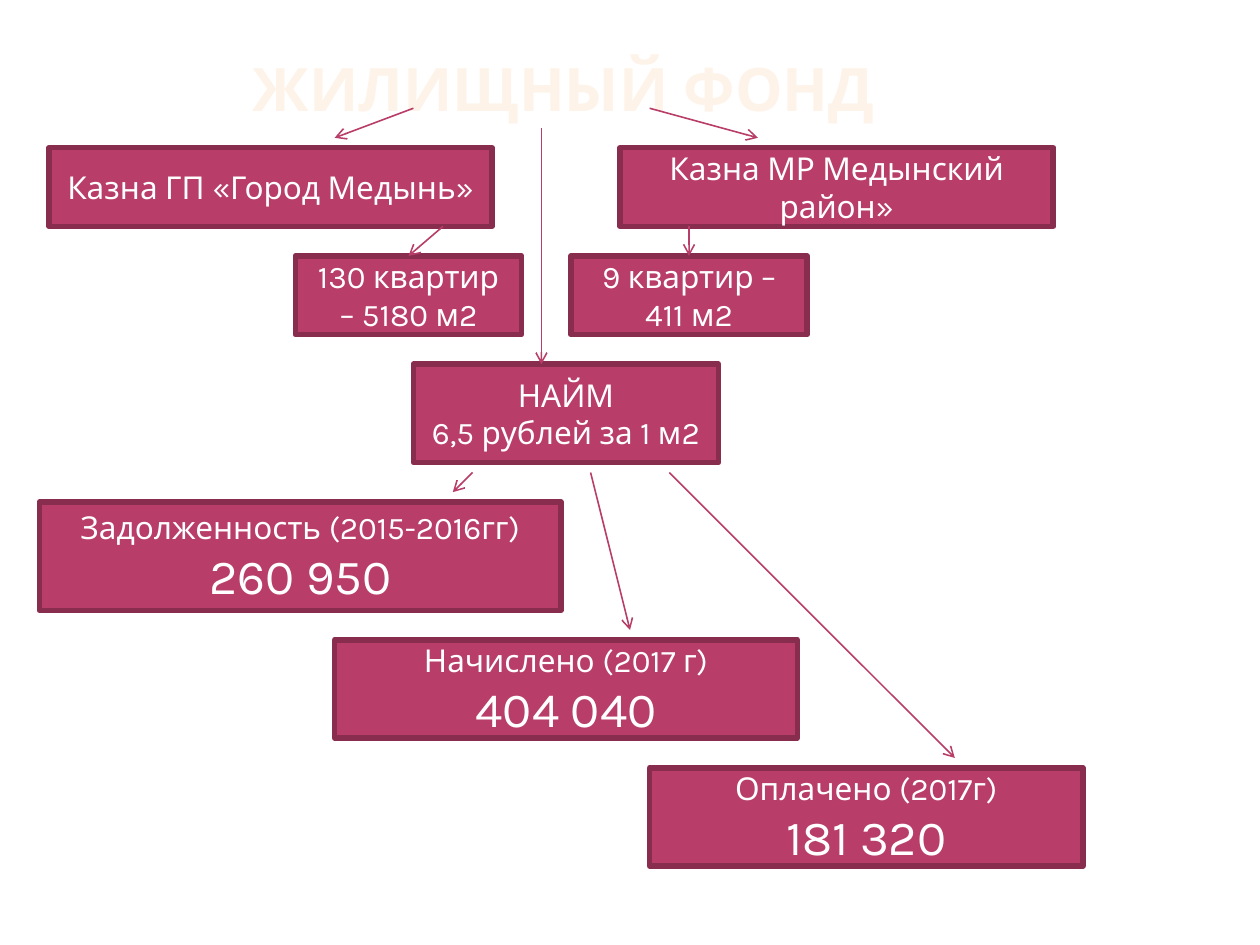
from dataclasses import dataclass

from pptx import Presentation
from pptx.dml.color import RGBColor
from pptx.enum.shapes import MSO_CONNECTOR, MSO_SHAPE
from pptx.enum.text import MSO_ANCHOR, MSO_AUTO_SIZE, PP_ALIGN
from pptx.oxml.ns import qn
from pptx.util import Inches, Pt
from lxml.etree import SubElement

COLUMNS, ROWS = 256, 192
UNIT = Inches(10) / COLUMNS  # square grid cell


@dataclass(frozen=True)
class Theme:
    font: str = "Karla"
    title_color: str = "FEF3E8"
    fill: str = "B83D68"
    border: str = "882D4D"
    text: str = "FFFFFF"
    title_size: float = 34.2
    label_size: float = 18
    amount_size: float = 28
    border_width: float = 3.15
    arrow_width: float = 0.9


@dataclass(frozen=True)
class Box:
    """A rectangle in grid columns and rows."""
    left: float
    top: float
    width: float
    height: float

    def inner(self, left, top, width, height):
        return Box(self.left + left, self.top + top, width, height)

    def point(self, column, row):
        return self.left + column, self.top + row

    def lengths(self):
        return [grid(value) for value in (self.left, self.top, self.width, self.height)]


THEME = Theme()


def grid(value):
    return round(value * UNIT)


def write_line(para, text, *, size, color, bold=False):
    para.alignment = PP_ALIGN.CENTER
    span = para.add_run()
    span.text = text
    span.font.name = THEME.font
    span.font.size = Pt(size)
    span.font.bold = bold
    span.font.color.rgb = RGBColor.from_string(color)


def add_card(page, box, label, amount=None):
    """Bordered rectangle with label lines and an optional large amount."""
    card = page.shapes.add_shape(MSO_SHAPE.RECTANGLE, *box.lengths())
    card.shadow.inherit = False
    card.fill.solid()
    card.fill.fore_color.rgb = RGBColor.from_string(THEME.fill)
    card.line.color.rgb = RGBColor.from_string(THEME.border)
    card.line.width = Pt(THEME.border_width)
    frame = card.text_frame
    frame.word_wrap = True
    frame.vertical_anchor = MSO_ANCHOR.MIDDLE
    lines = [(text, THEME.label_size) for text in label.split("\n")]
    if amount:
        lines.append((amount, THEME.amount_size))
    for index, (text, size) in enumerate(lines):
        para = frame.add_paragraph() if index else frame.paragraphs[0]
        write_line(para, text, size=size, color=THEME.text)
    return card


def add_arrow(page, start, end, target=None):
    """Arrow between grid points; a target card is joined at its top."""
    ends = [grid(value) for value in (*start, *end)]
    arrow = page.shapes.add_connector(MSO_CONNECTOR.STRAIGHT, *ends)
    arrow.line.color.rgb = RGBColor.from_string(THEME.fill)
    arrow.line.width = Pt(THEME.arrow_width)
    properties = arrow._element.spPr
    SubElement(properties.find(qn("a:ln")), qn("a:tailEnd"), type="arrow")
    SubElement(properties, qn("a:effectLst"))
    if target is not None:
        arrow.end_connect(target, 0)


def place_title(page, box):
    title = page.shapes.title
    title.left, title.top, title.width, title.height = box.lengths()
    frame = title.text_frame
    frame.auto_size = MSO_AUTO_SIZE.NONE
    frame.word_wrap = True
    frame.vertical_anchor = MSO_ANCHOR.BOTTOM
    frame.margin_left = frame.margin_right = Inches(0.05)
    frame.margin_top = frame.margin_bottom = 0
    write_line(frame.paragraphs[0], "ЖИЛИЩНЫЙ ФОНД", size=THEME.title_size,
               color=THEME.title_color, bold=True)


def place_fund(page, box, owner, flats, *, flats_left, flats_width, drop, source, entry):
    """One owner's card, its flats below, and the arrows into both."""
    card_height, gap = 16, 6
    add_card(page, box.inner(0, 0, box.width, card_height), owner)
    flats_top = card_height + gap
    flats_card = add_card(
        page, box.inner(flats_left, flats_top, flats_width, card_height), flats)
    add_arrow(page, box.point(source, -8), box.point(entry, -2))
    add_arrow(page, box.point(drop, card_height),
              box.point(flats_left + flats_width / 2, flats_top), flats_card)


def place_rent(page, box):
    """Rent rate card with the long arrow from the title."""
    add_card(page, box, "НАЙМ\n6,5 рублей за 1 м2")
    add_arrow(page, box.point(26, -48), box.point(26, 0))


def place_totals(page, box):
    """Stepped cards of amounts, each fed by an arrow from the rent card."""
    totals = [
        # label, amount, card (left, top, width, height), arrow start and end
        ("Задолженность (2015-2016гг)", "260 950", (0, 6, 106, 22), (88, 0), (84, 4)),
        ("Начислено (2017 г)", "404 040", (60, 34, 94, 20), (112, 0), (120, 32)),
        ("Оплачено (2017г)", "181 320", (124, 60, 88, 20), (128, 0), (186, 58)),
    ]
    for label, amount, card, start, end in totals:
        add_card(page, box.inner(*card), label, amount)
        add_arrow(page, box.point(*start), box.point(*end))


def main():
    deck = Presentation()
    deck.slide_width, deck.slide_height = grid(COLUMNS), grid(ROWS)
    page = deck.slides.add_slide(deck.slide_layouts[5])  # title only

    place_title(page, Box(13, 9, 203, 16))
    place_fund(page, Box(10, 30, 90, 38), "Казна ГП «Город Медынь»",
               "130 квартир – 5180 м2", flats_left=50, flats_width=46,
               drop=80, source=74, entry=58)
    place_fund(page, Box(126, 30, 88, 38), "Казна МР Медынский район»",
               "9 квартир – 411 м2", flats_left=-10, flats_width=48,
               drop=14, source=6, entry=28)
    place_rent(page, Box(84, 74, 62, 20))
    place_totals(page, Box(8, 96, 212, 80))

    deck.save("out.pptx")


if __name__ == "__main__":
    main()
